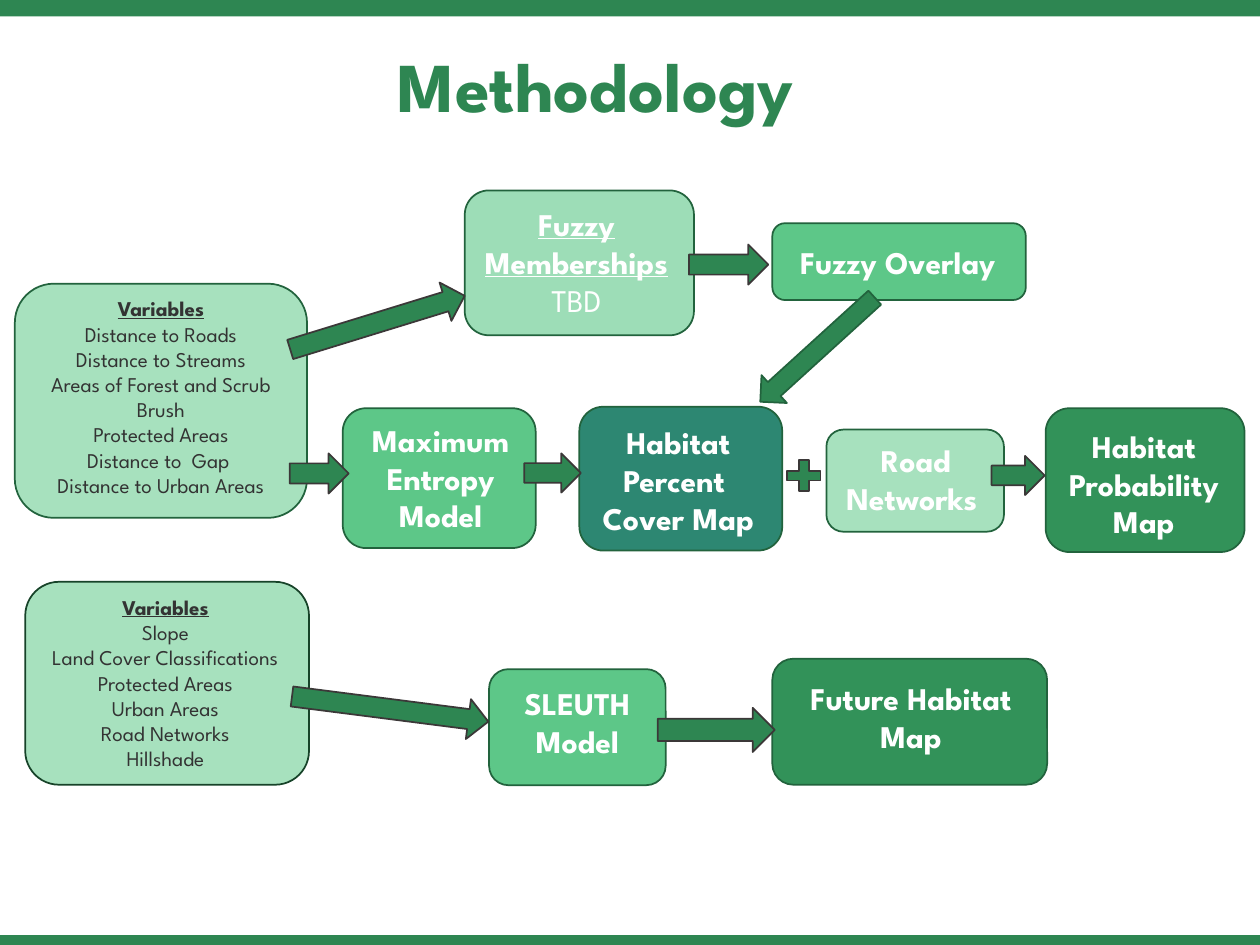
from pptx import Presentation
from pptx.dml.color import RGBColor
from pptx.enum.shapes import MSO_SHAPE as SHAPE
from pptx.enum.text import MSO_ANCHOR as ANCHOR, PP_ALIGN as ALIGN
from pptx.util import Cm, Pt

FONT = "League Spartan"
GREEN, EDGE, DARK_EDGE, ARROW_EDGE = "2E8652", "22633D", "174329", "3B3838"
WHITE, INK = "FFFFFF", "333333"
PALE, MINT, BRIGHT, DEEP, TEAL = "A7E1BE", "9DDDB7", "5DC788", "329259", "2D8772"

# Content: all places are (left, top, width, height) in cm
BARS = [(0, 0, 25.4, 0.33), (0, 18.85, 25.4, 0.2)]

# Steps: box, fill, text area, lines
STEPS = [
    ((6.91, 8.23, 3.89, 2.82), BRIGHT, (6.83, 8.36, 4.11, 2.57), ["Maximum Entropy Model"]),
    ((11.68, 8.2, 4.09, 2.9), TEAL, (11.4, 8.41, 4.55, 2.57), ["Habitat Percent ", "Cover Map"]),
    ((9.86, 13.49, 3.56, 2.34), BRIGHT, (9.53, 13.67, 4.22, 1.8), ["SLEUTH", "Model"]),
    ((15.57, 13.28, 5.54, 2.54), DEEP, (15.62, 13.56, 5.49, 1.8), ["Future Habitat Map"]),
    ((21.08, 8.23, 4.01, 2.9), DEEP, (20.9, 8.48, 4.32, 2.57), ["Habitat Probability Map"]),
    ((15.57, 4.5, 5.11, 1.55), BRIGHT, (15.7, 4.78, 4.8, 1.02), ["Fuzzy Overlay"]),
    ((16.66, 8.66, 3.58, 2.06), PALE, (16.71, 8.76, 3.51, 1.8), ["Road Networks "]),
]

# Headed boxes: box, fill, edge, text area, text format, heading and lines
HEADED = [
    ((9.37, 3.84, 4.62, 2.92), MINT, EDGE, (9.27, 4.01, 4.7, 2.57),
     dict(size=18, color=WHITE), ["Fuzzy Memberships", "TBD"]),
    ((0.51, 11.73, 5.72, 4.09), PALE, DARK_EDGE, (0.2, 11.86, 6.27, 3.84),
     dict(size=12, color=INK),
     ["Variables", "Slope", "Land Cover Classifications", "Protected Areas",
      "Urban Areas", "Road Networks", "Hillshade"]),
    ((0.3, 5.72, 5.89, 4.72), PALE, EDGE, (0.3, 5.84, 5.89, 4.37),
     dict(size=12, color=INK),
     ["Variables", "Distance to Roads", "Distance to Streams",
      "Areas of Forest and Scrub Brush", "Protected Areas", "Distance to  Gap ",
      "Distance to Urban Areas"]),
]

# Arrows: kind, place, rotation, edge
ARROWS = [
    (SHAPE.RIGHT_ARROW, (5.77, 6.1, 3.68, 0.81), 342.9, ARROW_EDGE),
    (SHAPE.RIGHT_ARROW, (5.87, 13.89, 3.99, 0.81), 7.3, ARROW_EDGE),
    (SHAPE.RIGHT_ARROW, (5.84, 9.14, 1.19, 0.81), 0, ARROW_EDGE),
    (SHAPE.RIGHT_ARROW, (10.57, 9.14, 1.14, 0.79), 0, ARROW_EDGE),
    (SHAPE.RIGHT_ARROW, (13.89, 4.93, 1.6, 0.81), 0, ARROW_EDGE),
    (SHAPE.RIGHT_ARROW, (13.26, 14.27, 2.36, 0.89), 0, ARROW_EDGE),
    (SHAPE.RIGHT_ARROW, (19.99, 9.19, 1.07, 0.79), 0, ARROW_EDGE),
    (SHAPE.MATH_PLUS, (15.75, 9.17, 0.91, 0.84), 0, ARROW_EDGE),
    (SHAPE.DOWN_ARROW, (16.1, 5.49, 0.76, 3.12), 47.7, EDGE),
]

prs = Presentation()
prs.slide_width, prs.slide_height = Cm(25.4), Cm(19.05)
s = prs.slides.add_slide(prs.slide_layouts[6])


def rgb(color):
    return RGBColor.from_string(color)


def add_shape(kind, place, fill, edge=None, rotation=0):
    sp = s.shapes.add_shape(kind, *map(Cm, place))
    sp.shadow.inherit = False
    sp.rotation = rotation
    sp.fill.solid()
    sp.fill.fore_color.rgb = rgb(fill)
    if edge:
        sp.line.color.rgb = rgb(edge)
        sp.line.width = Pt(1)
    else:
        sp.line.fill.background()


def add_text(place, lines, size=18, color=WHITE, bold=True, headed=False,
             align=ALIGN.CENTER, anchor=ANCHOR.TOP, spacing=None):
    tf = s.shapes.add_textbox(*map(Cm, place)).text_frame
    tf.word_wrap = True
    tf.vertical_anchor = anchor
    for i, line in enumerate(lines):
        p = tf.paragraphs[0] if i == 0 else tf.add_paragraph()
        p.alignment = align
        if spacing:
            p.line_spacing = spacing
        r = p.add_run()
        r.text = line
        r.font.name, r.font.size = FONT, Pt(size)
        r.font.color.rgb = rgb(color)
        # In a headed list only the first line is bold and underlined
        r.font.bold = i == 0 if headed else bold
        r.font.underline = headed and i == 0


# Bars and title
for place in BARS:
    add_shape(SHAPE.RECTANGLE, place, GREEN)
add_text((7.77, 0.64, 9.91, 2.06), ["Methodology"], size=40, color=GREEN,
         align=ALIGN.LEFT, anchor=ANCHOR.BOTTOM, spacing=0.9)

# Boxes with their text
for box, fill, area, lines in STEPS:
    add_shape(SHAPE.ROUNDED_RECTANGLE, box, fill, EDGE)
    add_text(area, lines)
for box, fill, edge, area, style, lines in HEADED:
    add_shape(SHAPE.ROUNDED_RECTANGLE, box, fill, edge)
    add_text(area, lines, headed=True, **style)

# Arrows and plus sign
for kind, place, rotation, edge in ARROWS:
    add_shape(kind, place, GREEN, edge, rotation)

prs.save("out.pptx")
